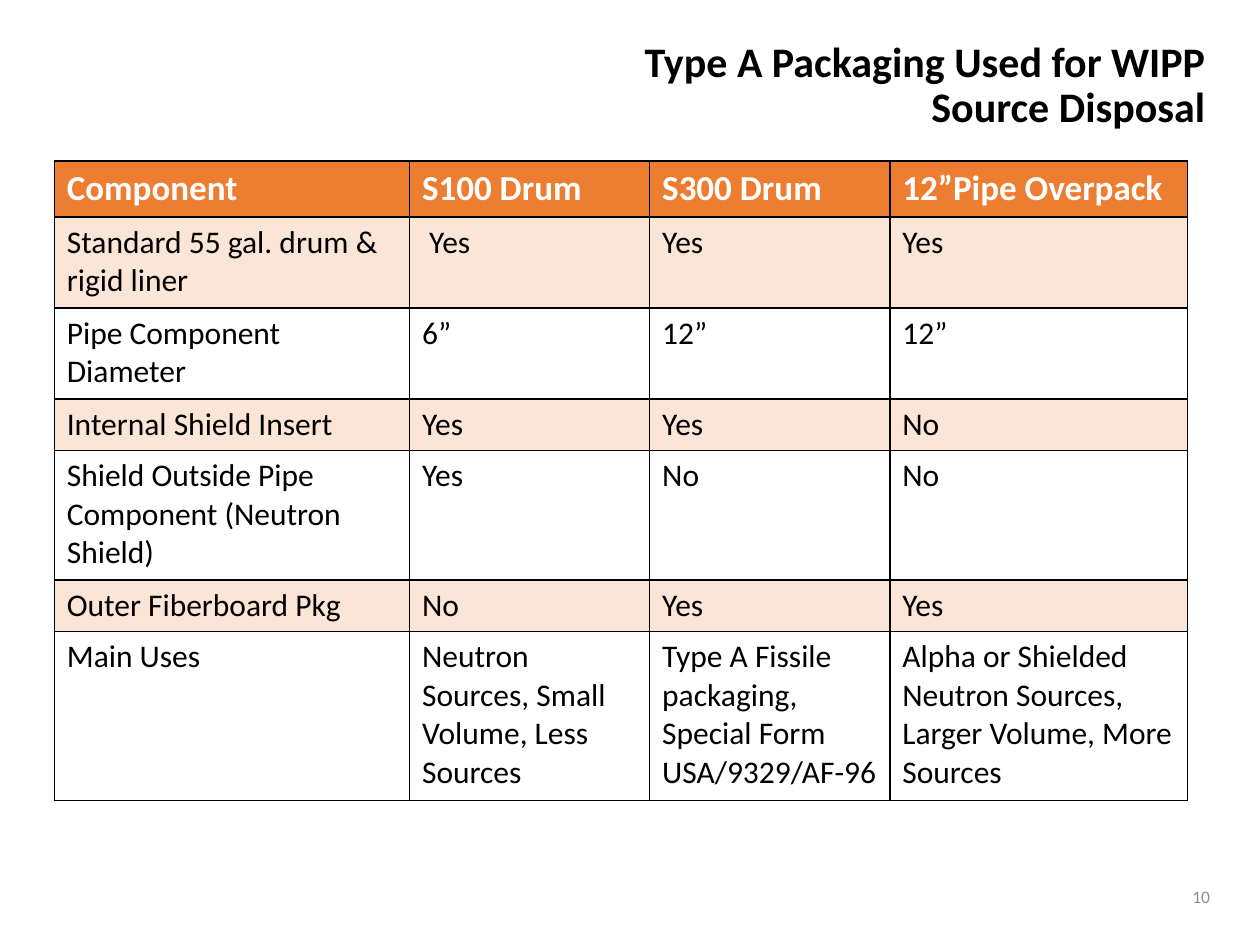
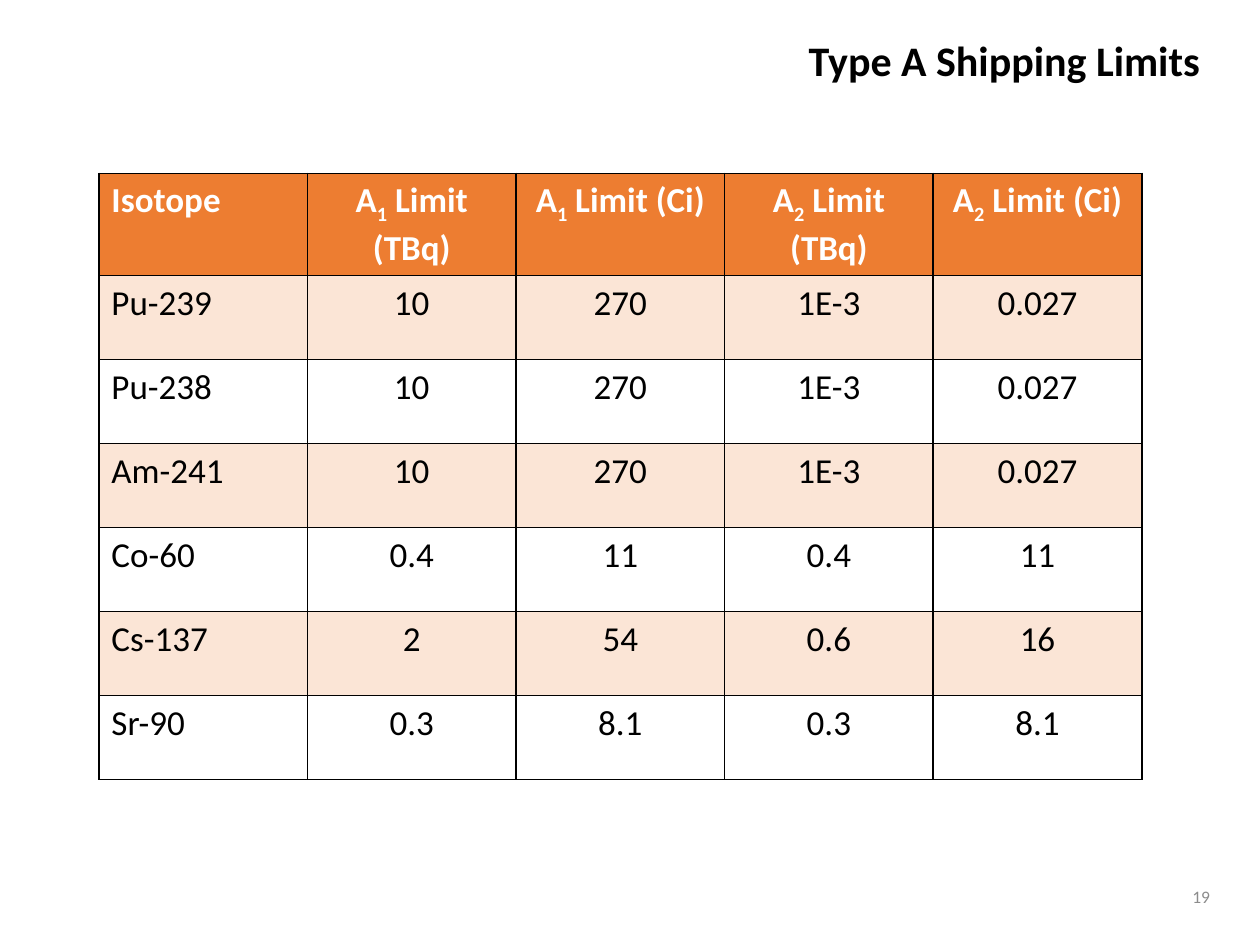
from lxml import etree
from pptx import Presentation
from pptx.dml.color import RGBColor
from pptx.enum.text import MSO_ANCHOR, MSO_AUTO_SIZE, PP_ALIGN
from pptx.oxml.ns import qn
from pptx.util import Pt

LEFT, CENTER, RIGHT = PP_ALIGN.LEFT, PP_ALIGN.CENTER, PP_ALIGN.RIGHT
TOP, MIDDLE = MSO_ANCHOR.TOP, MSO_ANCHOR.MIDDLE
NO_AUTOFIT = MSO_AUTO_SIZE.NONE

BLACK = RGBColor(0x00, 0x00, 0x00)
WHITE = RGBColor(0xFF, 0xFF, 0xFF)
ORANGE = RGBColor(0xED, 0x7D, 0x31)
PEACH = RGBColor(0xFB, 0xE5, 0xD6)
GRAY = RGBColor(0x8C, 0x8C, 0x8C)

FONT = "Calibri"
TITLE_ONLY = 5
TITLE_STYLE = {"name": FONT, "size": Pt(24), "bold": True}
HEADER_STYLE = {"name": FONT, "size": Pt(20), "bold": True}
NUMBER_STYLE = {"name": FONT, "size": Pt(10), "bold": False}

PACKAGING = [
    ["Component", "S100 Drum", "S300 Drum", "12”Pipe Overpack"],
    ["Standard 55 gal. drum & rigid liner", " Yes", "Yes", "Yes"],
    ["Pipe Component Diameter", "6”", "12”", "12”"],
    ["Internal Shield Insert", "Yes", "Yes", "No"],
    ["Shield Outside Pipe Component (Neutron Shield)", "Yes", "No", "No"],
    ["Outer Fiberboard Pkg", "No", "Yes", "Yes"],
    ["Main Uses",
     "Neutron Sources, Small Volume, Less Sources",
     "Type A Fissile packaging, Special Form USA/9329/AF-96",
     "Alpha or Shielded Neutron Sources, Larger Volume, More Sources"],
]
LIMIT_HEADERS = [("A", index, f" Limit ({unit})")
                 for index in "12" for unit in ("TBq", "Ci")]
SHIPPING_LIMITS = [
    ["Isotope", *LIMIT_HEADERS],
    ["Pu-239", "10", "270", "1E-3", "0.027"],
    ["Pu-238", "10", "270", "1E-3", "0.027"],
    ["Am-241", "10", "270", "1E-3", "0.027"],
    ["Co-60", "0.4", "11", "0.4", "11"],
    ["Cs-137", "2", "54", "0.6", "16"],
    ["Sr-90", "0.3", "8.1", "0.3", "8.1"],
]


def write(para, content, style, color, align):
    """Write text, or a tuple whose every second part is a subscript."""
    para.alignment = align
    parts = content if isinstance(content, tuple) else (content,)
    for position, part in enumerate(parts):
        span = para.add_run()
        span.text = part
        for name, value in style.items():
            setattr(span.font, name, value)
        span.font.color.rgb = color
        if position % 2:
            span._r.get_or_add_rPr().set("baseline", "-25000")


def place(box, left, top, width, height):
    """Set the position and size of a box in points."""
    frame = {"left": left, "top": top, "width": width, "height": height}
    for name, value in frame.items():
        setattr(box, name, Pt(value))


def add_page(deck, title, title_area, number):
    """Add a page with a right-aligned title and a page number."""
    page = deck.slides.add_slide(deck.slide_layouts[TITLE_ONLY])
    box = page.shapes.title
    place(box, *title_area)
    frame = box.text_frame
    frame.auto_size, frame.vertical_anchor = NO_AUTOFIT, TOP
    para = frame.paragraphs[0]
    para.line_spacing = 0.9
    write(para, title, TITLE_STYLE, BLACK, RIGHT)

    footer = page.shapes.add_textbox(Pt(536.5), Pt(497.5), Pt(162), Pt(29))
    frame = footer.text_frame
    frame.word_wrap, frame.vertical_anchor = True, MIDDLE
    write(frame.paragraphs[0], number, NUMBER_STYLE, GRAY, RIGHT)
    return page


def outline(cell):
    """Draw a thin black border on all sides of a cell."""
    properties = cell._tc.get_or_add_tcPr()
    for side in ("lnL", "lnR", "lnT", "lnB"):
        line = etree.SubElement(properties, qn(f"a:{side}"), w=str(Pt(1)))
        fill = etree.SubElement(line, qn("a:solidFill"))
        etree.SubElement(fill, qn("a:srgbClr"), val=str(BLACK))


def paint(cell, row):
    """Fill the header and every odd row; leave the others clear."""
    if row == 0 or row % 2:
        cell.fill.solid()
        cell.fill.fore_color.rgb = PEACH if row else ORANGE
    else:
        cell.fill.background()


def add_grid(page, left, top, widths, heights, rows, body_size, value_align):
    """Add a bordered table with a header and shaded alternate rows."""
    grid = page.shapes.add_table(
        len(heights), len(widths), Pt(left), Pt(top),
        Pt(sum(widths)), Pt(sum(heights))).table
    grid.horz_banding = False
    for column, width in zip(grid.columns, widths):
        column.width = Pt(width)
    for line, height in zip(grid.rows, heights):
        line.height = Pt(height)
    body_style = {"name": FONT, "size": Pt(body_size), "bold": False}
    for row, contents in enumerate(rows):
        style, color = (body_style, BLACK) if row else (HEADER_STYLE, WHITE)
        for column, content in enumerate(contents):
            cell = grid.cell(row, column)
            outline(cell)
            paint(cell, row)
            write(cell.text_frame.paragraphs[0], content, style, color,
                  value_align if column else LEFT)


def main():
    """Build the two pages and save the deck."""
    deck = Presentation()
    deck.slide_width, deck.slide_height = Pt(720), Pt(540)

    page = add_page(deck, "Type A Packaging Used for WIPP Source Disposal",
                    (301.5, 20, 394.5, 55), "10")
    add_grid(page, 31, 92, [203, 137.25, 137.25, 170],
             [32, 52, 52, 29.5, 74, 29.5, 96.5], PACKAGING, 18, LEFT)

    page = add_page(deck, "Type A Shipping Limits", (221, 19.5, 472, 39), "19")
    add_grid(page, 56.5, 99, [119.2] * 5, [54] + [48] * 6,
             SHIPPING_LIMITS, 20, CENTER)

    deck.save("out.pptx")


if __name__ == "__main__":
    main()
